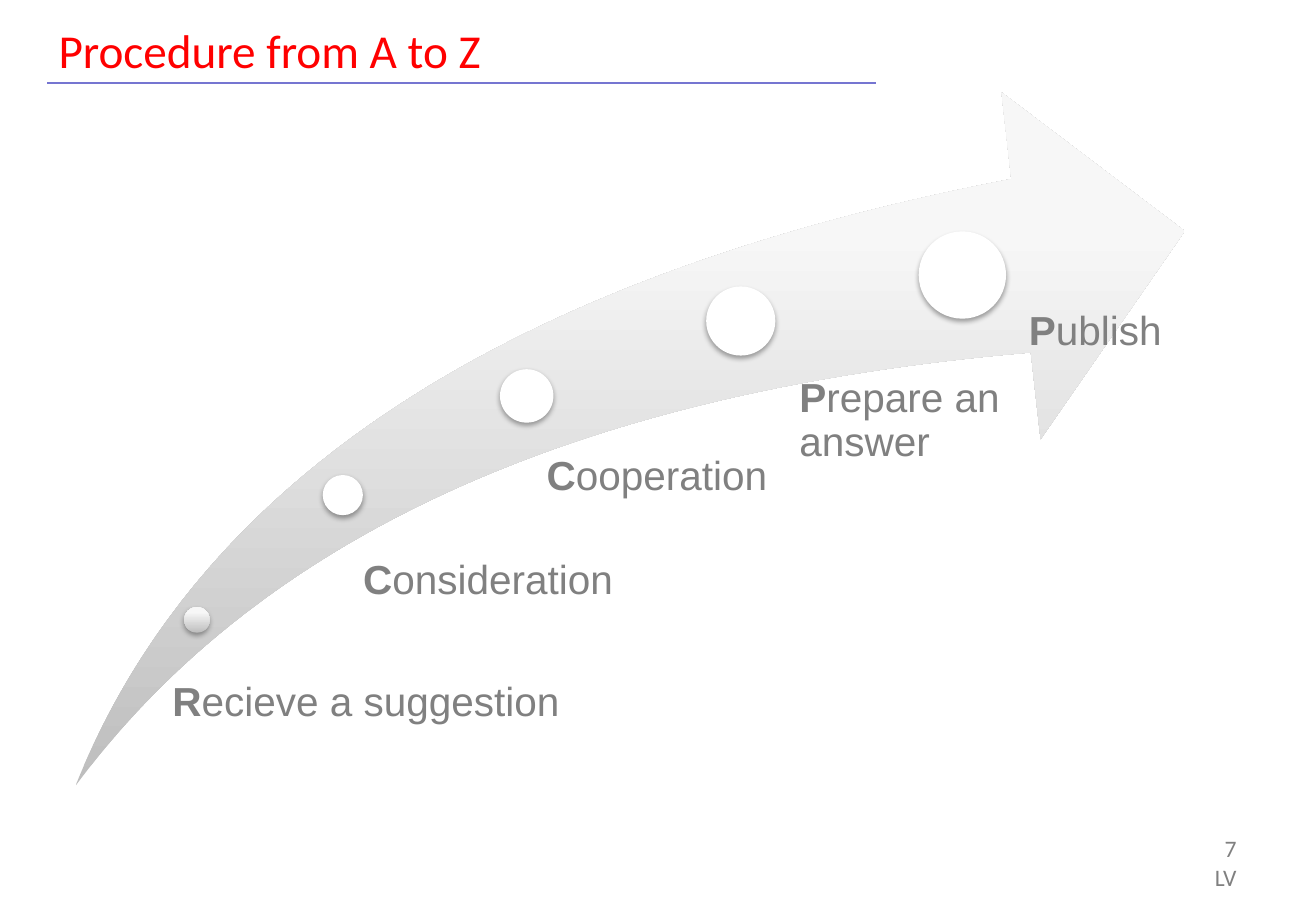
from copy import deepcopy
from lxml.etree import SubElement as Sub
from pptx import Presentation
from pptx.dml.color import RGBColor as RGB
from pptx.enum.shapes import MSO_CONNECTOR as Wire, MSO_SHAPE as Shape
from pptx.enum.text import MSO_ANCHOR as Anchor, PP_ALIGN as Align
from pptx.oxml.ns import qn
from pptx.util import Pt

TITLE = "Procedure from A to Z"
FOOT = ["7", "LV"]
STEPS = [
    ("Recieve a suggestion", (116.75, 367.45, 15.2), (102.2, 404, 250)),
    ("Consideration", (203.2, 293.5, 23.8), (215.3, 331.8, 165)),
    ("Cooperation", (312.2, 234.7, 31.7), (324, 270.2, 150)),
    ("Prepare an answer", (439.1, 190.3, 41), (473.8, 224, 168)),
    ("Publish", (570.4, 163, 51.8), (609.8, 184.2, 104)),
]
THEME = {
    "red": "FF0000", "gray": "808080", "rule": "7575D1",
    "white": "FFFFFF", "fade": [(0, "BEBEBE"), (0.8, "F7F7F7"), (1, "F8F8F8")],
    "head": 28, "body": 24, "foot": 14, "sans": "Calibri", "label": "Arial",
}

deck = Presentation()
deck.slide_width, deck.slide_height = Pt(780), Pt(540)
slide = deck.slides.add_slide(deck.slide_layouts[6])
shapes = slide.shapes


def paint(fill, hue):
    fill.solid()
    fill.fore_color.rgb = RGB.from_string(hue)


def shade(fill, node):
    fill.gradient()
    fill.gradient_angle = 90
    stops = node.find(".//" + qn("a:gsLst"))
    stops.append(deepcopy(stops[-1]))
    for stop, (place, hue) in zip(fill.gradient_stops, THEME["fade"]):
        stop.position = place
        stop.color.rgb = RGB.from_string(hue)


def draw(kind, *box):
    item = shapes.add_shape(kind, *map(Pt, box))
    item.shadow.inherit = False
    item.line.fill.background()
    return item


def cast(item):
    effects = item._element.spPr.find(qn("a:effectLst"))
    drop = Sub(effects, qn("a:outerShdw"), blurRad=str(Pt(3.1)),
               dist=str(Pt(1.8)), dir="5400000", rotWithShape="0")
    tint = Sub(drop, qn("a:srgbClr"), val="000000")
    Sub(tint, qn("a:alpha"), val="35000")


def write(box, lines, size, face, hue, align=Align.LEFT, inset=(7.2, 3.6)):
    frame = shapes.add_textbox(*map(Pt, box)).text_frame
    frame.word_wrap = True
    frame.margin_left = frame.margin_right = Pt(inset[0])
    frame.margin_top = frame.margin_bottom = Pt(inset[1])
    for i, runs in enumerate(lines):
        para = frame.add_paragraph() if i else frame.paragraphs[0]
        para.alignment = align
        para.font.size, para.font.name = Pt(size), face
        para.font.color.rgb = RGB.from_string(hue)
        for text, bold in runs:
            run = para.add_run()
            run.text = text
            if bold:
                run.font.bold = True
    return frame


rule = shapes.add_connector(Wire.STRAIGHT, Pt(519), Pt(49.2), Pt(27.6), Pt(49.2))
rule.line.color.rgb = RGB.from_string(THEME["rule"])
rule.line.width = Pt(0.75)
Sub(rule._element.spPr, qn("a:effectLst"))

head = write((27.6, 9.4, 522, 39.6), [[(TITLE, False)]],
             THEME["head"], THEME["sans"], THEME["red"])
head.vertical_anchor = Anchor.MIDDLE
write((684.7, 491, 55.4, 39.6), [[(line, False)] for line in FOOT],
      THEME["foot"], THEME["sans"], THEME["gray"], Align.RIGHT)

arrow = draw(Shape.SWOOSH_ARROW, 44.8, 54.8, 657.4, 411)
arrow.adjustments[0] = arrow.adjustments[1] = 0.25
shade(arrow.fill, arrow._element)

for i, (name, (mid, level, size), (left, top, width)) in enumerate(STEPS):
    dot = draw(Shape.OVAL, mid - size / 2, level - size / 2, size, size)
    cast(dot)
    if i:
        paint(dot.fill, THEME["white"])
    else:
        shade(dot.fill, dot._element)
    label = write((left, top, width, 54), [[(name[0], True), (name[1:], False)]],
                  THEME["body"], THEME["label"], THEME["gray"], inset=(0, 0))
    label.paragraphs[0].line_spacing = 0.9

deck.save("out.pptx")
